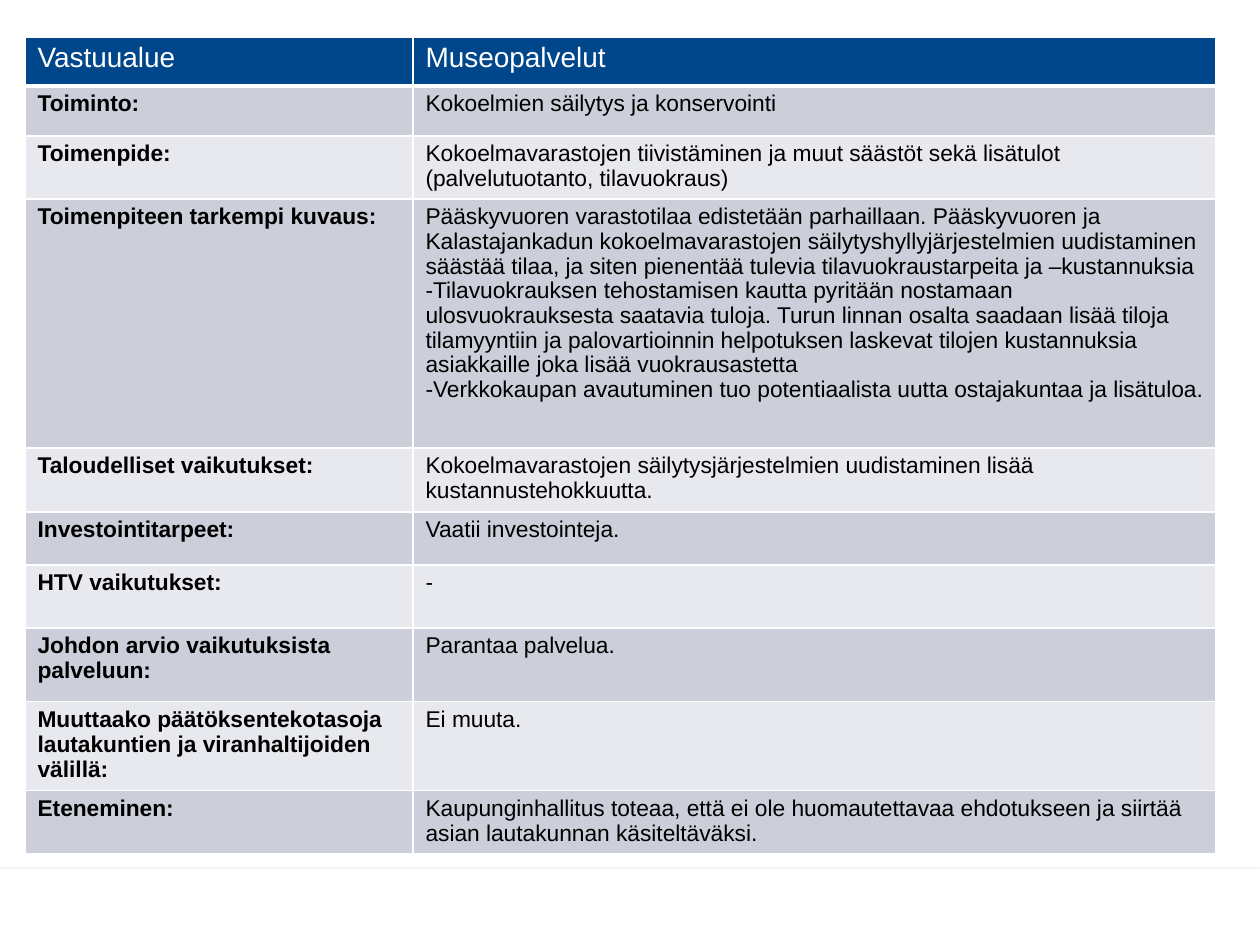
from dataclasses import dataclass

from lxml import etree
from pptx import Presentation
from pptx import util as u
from pptx.dml.color import RGBColor
from pptx.enum import shapes
from pptx.oxml.ns import qn

PX = u.Inches(1) // 126


@dataclass(frozen=True)
class Theme:
    """Colours, font and type sizes of the slide."""
    font: str = "Arial"
    header: str = "00468B"
    bands: tuple = ("CCCFDA", "E7E9EE")
    white: str = "FFFFFF"
    black: str = "000000"
    header_size: int = 16
    body_size: int = 13


THEME = Theme()
COLUMNS = (388, 803)
ROWS = (
    (49, "Vastuualue", "Museopalvelut"),
    (50, "Toiminto:", "Kokoelmien säilytys ja konservointi"),
    (63, "Toimenpide:", "Kokoelmavarastojen tiivistäminen ja muut säästöt sekä "
     "lisätulot (palvelutuotanto, tilavuokraus)"),
    (249, "Toimenpiteen tarkempi kuvaus:",
     "Pääskyvuoren varastotilaa edistetään parhaillaan. Pääskyvuoren ja "
     "Kalastajankadun kokoelmavarastojen säilytyshyllyjärjestelmien uudistaminen "
     "säästää tilaa, ja siten pienentää tulevia tilavuokraustarpeita ja –kustannuksia\n"
     "-Tilavuokrauksen tehostamisen kautta pyritään nostamaan ulosvuokrauksesta "
     "saatavia tuloja. Turun linnan osalta saadaan lisää tiloja tilamyyntiin ja "
     "palovartioinnin helpotuksen laskevat tilojen kustannuksia asiakkaille joka "
     "lisää vuokrausastetta\n"
     "-Verkkokaupan avautuminen tuo potentiaalista uutta ostajakuntaa ja lisätuloa."),
    (64, "Taloudelliset vaikutukset:", "Kokoelmavarastojen säilytysjärjestelmien "
     "uudistaminen lisää kustannustehokkuutta."),
    (53, "Investointitarpeet:", "Vaatii investointeja."),
    (63, "HTV vaikutukset:", "-"),
    (74, "Johdon arvio vaikutuksista palveluun:", "Parantaa palvelua."),
    (89, "Muuttaako päätöksentekotasoja lautakuntien ja viranhaltijoiden välillä:",
     "Ei muuta."),
    (63, "Eteneminen:", "Kaupunginhallitus toteaa, että ei ole huomautettavaa "
     "ehdotukseen ja siirtää asian lautakunnan käsiteltäväksi."),
)


def paint(fill, color):
    """Give a fill one solid colour."""
    fill.solid()
    fill.fore_color.rgb = RGBColor.from_string(color)


def add_color(parent, color):
    """Append an RGB colour element and return it."""
    return etree.SubElement(parent, qn("a:srgbClr"), val=color)


def add_borders(cell, bottom):
    """Draw white rules on all sides of a cell."""
    props = cell._tc.get_or_add_tcPr()
    widths = {"lnL": 1, "lnR": 1, "lnT": 1, "lnB": bottom}
    for i, (side, width) in enumerate(widths.items()):
        ln = etree.Element(qn(f"a:{side}"), w=str(u.Pt(width)))
        add_color(etree.SubElement(ln, qn("a:solidFill")), THEME.white)
        props.insert(i, ln)


def fill_cell(cell, content, row, col):
    """Write and format one cell according to its row and column."""
    header = row == 0
    cell.text_frame.text = content
    paint(cell.fill, THEME.header if header else THEME.bands[(row - 1) % 2])
    add_borders(cell, 3 if header else 1)
    for p in cell.text_frame.paragraphs:
        p.line_spacing = 0.97
        for r in p.runs:
            r.font.name = THEME.font
            r.font.size = u.Pt(THEME.header_size if header else THEME.body_size)
            r.font.bold = not header and col == 0
            r.font.color.rgb = RGBColor.from_string(
                THEME.white if header else THEME.black)


def add_footer(slide, x, y, w, h):
    """Add the white footer band with its soft shadow."""
    sp = slide.shapes.add_shape(
        shapes.MSO_SHAPE.RECTANGLE, x * PX, y * PX, w * PX, h * PX)
    sp.shadow.inherit = False
    paint(sp.fill, THEME.white)
    sp.line.fill.background()
    effects = sp._element.spPr.find(qn("a:effectLst"))
    shadow = etree.SubElement(
        effects, qn("a:outerShdw"), blurRad=str(u.Pt(3.1)), dist=str(u.Pt(1.8)),
        dir="5400000", rotWithShape="0")
    etree.SubElement(add_color(shadow, THEME.black), qn("a:alpha"), val="35000")


def add_measure_table(slide, x, y):
    """Add the table of the measure with its top left corner at x, y."""
    table = slide.shapes.add_table(
        len(ROWS), len(COLUMNS), x * PX, y * PX, sum(COLUMNS) * PX,
        sum(height for height, *_ in ROWS) * PX).table
    for column, width in zip(table.columns, COLUMNS):
        column.width = width * PX
    for i, (height, *contents) in enumerate(ROWS):
        table.rows[i].height = height * PX
        for j, content in enumerate(contents):
            fill_cell(table.cell(i, j), content, i, j)


def main():
    """Build and save the slide."""
    prs = Presentation()
    prs.slide_width, prs.slide_height = 1260 * PX, 945 * PX
    slide = prs.slides.add_slide(prs.slide_layouts[6])
    add_footer(slide, 0, 869, 1260, 76)
    add_measure_table(slide, 25, 37)
    prs.save("out.pptx")


if __name__ == "__main__":
    main()
